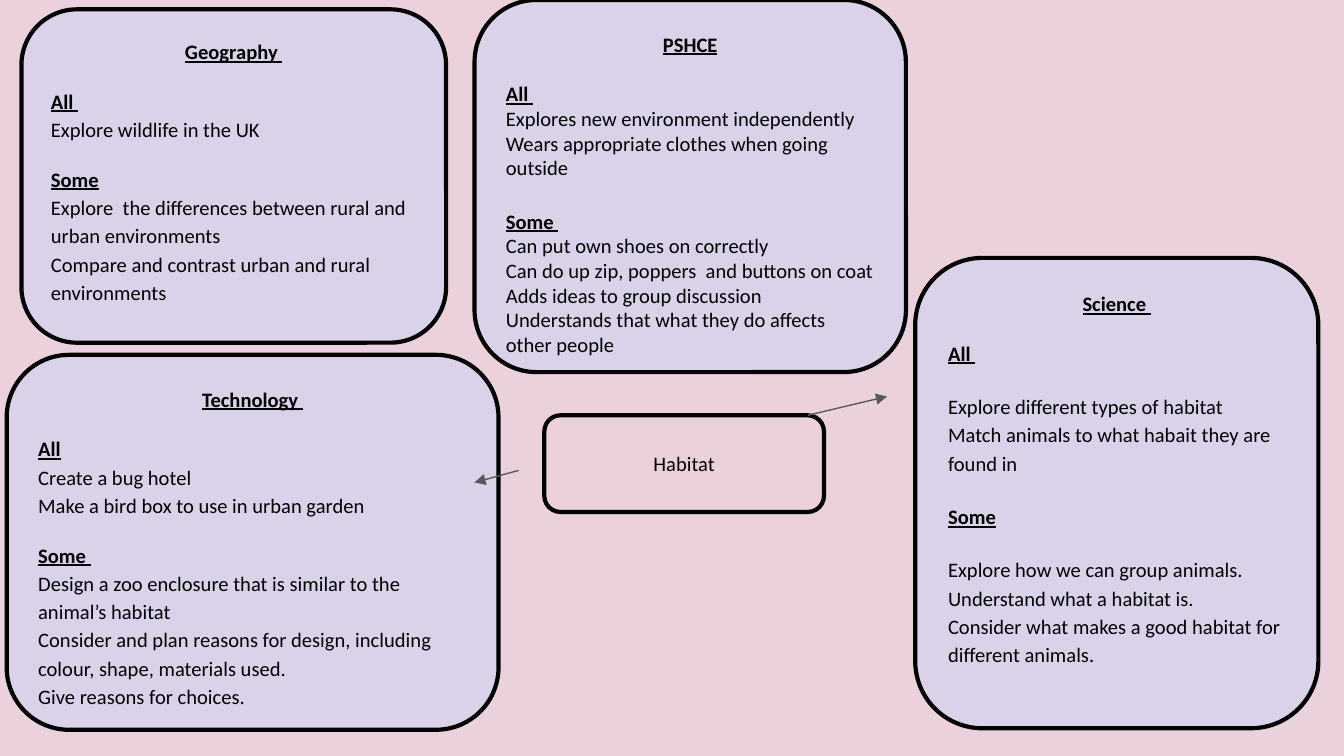
"""Build a topic map of curriculum goals around the theme of habitats."""
import pptx
import pptx.dml.color
import pptx.enum.dml
import pptx.enum.shapes
import pptx.enum.text
import pptx.oxml
import pptx.oxml.ns
import pptx.util

Pt = pptx.util.Pt
Align = pptx.enum.text.PP_ALIGN
Anchor = pptx.enum.text.MSO_ANCHOR

COLOURS = {"page": "EAD1DC", "subject": "D9D2E9", "ink": "000000", "arrow": "595959"}
FONT, SIZE = "Calibri", 11
BLANK_LINE = 13.4
WIDE_LINE = 15.4

TOPIC = ("Habitat", (291.6, 222.5, 149.8, 51.8))

SUBJECTS = [
    {"title": "Technology ", "place": (3.6, 190.1, 263.5, 200.9), "spacing": 1.15,
     "heading_gap": BLANK_LINE, "list_gap": 0,
     "groups": [
         ("All", ["Create a bug hotel", "Make a bird box to use in urban garden"]),
         ("Some ", ["Design a zoo enclosure that is similar to the animal’s habitat",
                    "Consider and plan reasons for design, including colour, shape, materials used.",
                    "Give reasons for choices."])]},
    {"title": "PSHCE", "place": (254.2, 0, 231.1, 199.4), "spacing": 1.0,
     "heading_gap": WIDE_LINE, "list_gap": 0,
     "groups": [
         ("All ", ["Explores new environment independently",
                   "Wears appropriate clothes when going outside"]),
         ("Some ", ["Can put own shoes on correctly",
                    "Can do up zip, poppers  and buttons on coat",
                    "Adds ideas to group discussion",
                    "Understands that what they do affects other people"])]},
    {"title": "Geography ", "place": (11.5, 5, 227.5, 178.6), "spacing": 1.15,
     "heading_gap": BLANK_LINE, "list_gap": 0,
     "groups": [
         ("All ", ["Explore wildlife in the UK"]),
         ("Some", ["Explore  the differences between rural and urban environments",
                   "Compare and contrast urban and rural environments"])]},
    {"title": "Science ", "place": (490.3, 138.2, 216, 252), "spacing": 1.15,
     "heading_gap": WIDE_LINE, "list_gap": BLANK_LINE,
     "groups": [
         ("All ", ["Explore different types of habitat",
                   "Match animals to what habait they are found in"]),
         ("Some", ["Explore how we can group animals.",
                   "Understand what a habitat is.",
                   "Consider what makes a good habitat for different animals."])]},
]

ARROWS = [((432.7, 222.5), (475.2, 212.4)), ((277.9, 252), (254.2, 258.5))]


def colour(name):
    return pptx.dml.color.RGBColor.from_string(COLOURS[name])


def add_box(page, place, fill, anchor):
    box = page.shapes.add_shape(pptx.enum.shapes.MSO_SHAPE.ROUNDED_RECTANGLE,
                                *(Pt(length) for length in place))
    box.shadow.inherit = False
    box.fill.solid()
    box.fill.fore_color.rgb = colour(fill)
    box.line.color.rgb = colour("ink")
    box.line.width = Pt(2.25)
    frame = box.text_frame
    frame.word_wrap = True
    frame.vertical_anchor = anchor
    frame.margin_left = frame.margin_right = Pt(7.2)
    frame.margin_top = frame.margin_bottom = Pt(7.2)
    return box


def write(para, text, align=Align.LEFT, heading=False, spacing=1.0, before=0):
    para.alignment = align
    para.line_spacing = spacing
    para.space_before = Pt(before)
    span = para.add_run()
    span.text = text
    span.font.name = FONT
    span.font.size = Pt(SIZE)
    span.font.color.rgb = colour("ink")
    span.font.bold = span.font.underline = heading


def add_subject(page, subject):
    frame = add_box(page, subject["place"], "subject", Anchor.TOP).text_frame
    write(frame.paragraphs[0], subject["title"], Align.CENTER, heading=True)
    for group, (heading, goals) in enumerate(subject["groups"]):
        gap = subject["heading_gap"] if group else BLANK_LINE
        write(frame.add_paragraph(), heading, heading=True, before=gap)
        for number, goal in enumerate(goals):
            write(frame.add_paragraph(), goal, spacing=subject["spacing"],
                  before=0 if number else subject["list_gap"])


def add_arrow(page, start, end):
    arrow = page.shapes.add_connector(pptx.enum.shapes.MSO_CONNECTOR.STRAIGHT,
                                      *(Pt(length) for length in start + end))
    arrow.line.color.rgb = colour("arrow")
    arrow.line.width = Pt(0.75)
    namespace = pptx.oxml.ns.nsdecls("a")
    line = arrow.line._get_or_add_ln()
    line.append(pptx.oxml.parse_xml(f'<a:tailEnd {namespace} type="triangle"/>'))
    arrow._element.spPr.append(pptx.oxml.parse_xml(f"<a:effectLst {namespace}/>"))


def main():
    deck = pptx.Presentation()
    deck.slide_width, deck.slide_height = Pt(720), Pt(405)
    page = deck.slides.add_slide(deck.slide_layouts[6])
    page.background.fill.solid()
    page.background.fill.fore_color.rgb = colour("page")
    name, place = TOPIC
    topic = add_box(page, place, "page", Anchor.MIDDLE)
    write(topic.text_frame.paragraphs[0], name, Align.CENTER)
    for subject in SUBJECTS:
        add_subject(page, subject)
    for start, end in ARROWS:
        add_arrow(page, start, end)
    deck.save("out.pptx")


if __name__ == "__main__":
    main()
